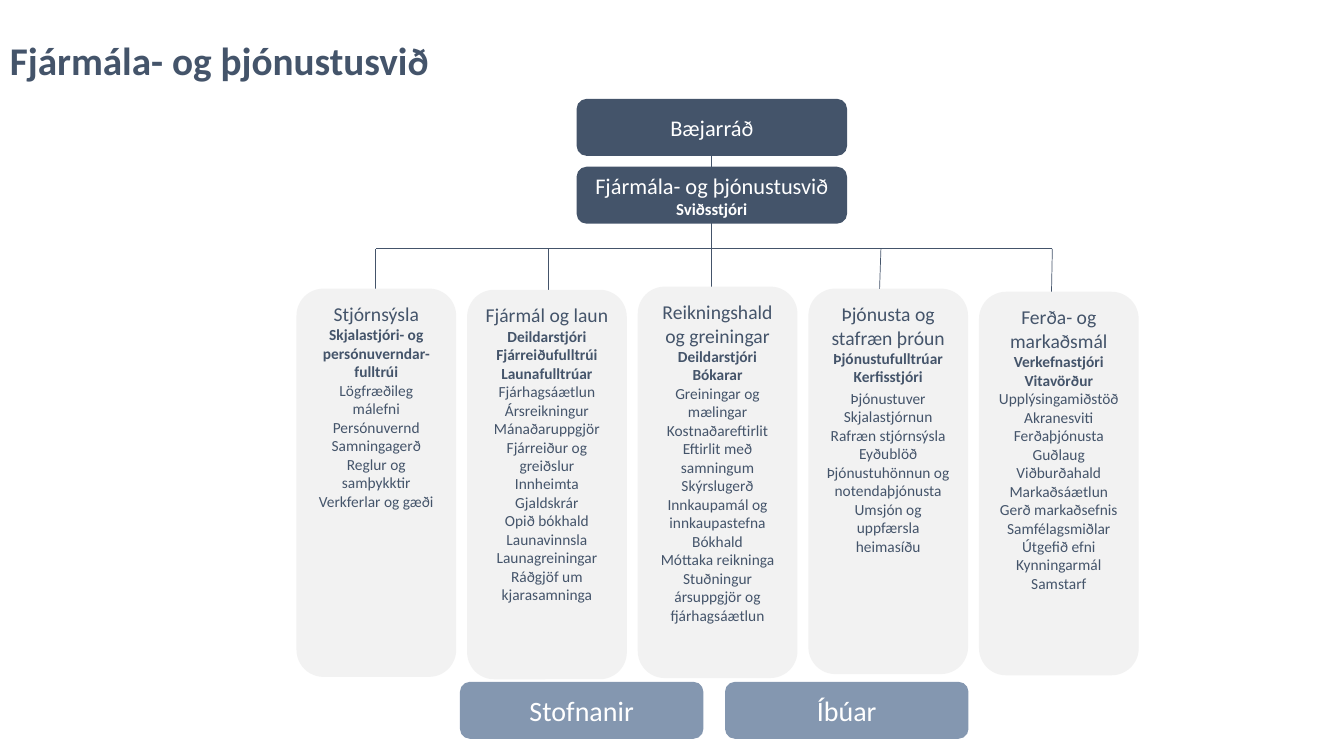
from lxml.etree import SubElement
from pptx import Presentation
from pptx.dml.color import RGBColor
from pptx.enum.shapes import MSO_CONNECTOR, MSO_SHAPE
from pptx.enum.text import MSO_ANCHOR, PP_ALIGN
from pptx.oxml.ns import qn
from pptx.util import Cm, Pt

COLORS = {"navy": "44546A", "steel": "8497B0", "card": "F2F2F2", "white": "FFFFFF"}
FONT = "Calibri"

TITLE = "Fjármála- og þjónustusvið"

# left, top, width, fill, lines of (text, size, bold)
BOXES = [
    (14.55, 2.51, 6.78, "navy", [("Bæjarráð", 16, False)]),
    (14.55, 4.22, 6.78, "navy", [("Fjármála- og þjónustusvið", 16, False),
                                 ("Sviðsstjóri", 12, True)]),
    (11.61, 17.2, 6.1, "steel", [("Stofnanir", 20, False)]),
    (18.29, 17.2, 6.1, "steel", [("Íbúar", 20, False)]),
]
BOX_HEIGHT = 1.4

# top, height, heading, staff, tasks
DEPARTMENTS = [
    (7.29, 9.75, "Stjórnsýsla", ["Skjalastjóri- og persónuverndar-fulltrúi"],
     ["Lögfræðileg málefni", "Persónuvernd", "Samningagerð",
      "Reglur og samþykktir", "Verkferlar og gæði"]),
    (7.32, 9.78, "Fjármál og laun",
     ["Deildarstjóri", "Fjárreiðufulltrúi", "Launafulltrúar"],
     ["Fjárhagsáætlun", "Ársreikningur", "Mánaðaruppgjör",
      "Fjárreiður og greiðslur", "Innheimta", "Gjaldskrár", "Opið bókhald",
      "Launavinnsla", "Launagreiningar", "Ráðgjöf um kjarasamninga"]),
    (7.24, 9.83, "Reikningshald og greiningar", ["Deildarstjóri", "Bókarar"],
     ["Greiningar og mælingar", "Kostnaðareftirlit", "Eftirlit með samningum",
      "Skýrslugerð", "Innkaupamál og innkaupastefna", "Bókhald",
      "Móttaka reikninga", "Stuðningur ársuppgjör og fjárhagsáætlun"]),
    (7.29, 9.68, "Þjónusta og stafræn þróun", ["Þjónustufulltrúar", "Kerfisstjóri"],
     ["Þjónustuver", "Skjalastjórnun", "Rafræn stjórnsýsla", "Eyðublöð",
      "Þjónustuhönnun og notendaþjónusta", "Umsjón og uppfærsla heimasíðu"]),
    (7.37, 9.63, "Ferða- og markaðsmál", ["Verkefnastjóri", "Vitavörður"],
     ["Upplýsingamiðstöð", "Akranesviti", "Ferðaþjónusta", "Guðlaug",
      "Viðburðahald", "Markaðsáætlun", "Gerð markaðsefnis", "Samfélagsmiðlar",
      "Útgefið efni Kynningarmál", "Samstarf"]),
]
CARD_LEFT, CARD_PITCH, CARD_WIDTH = 7.49, 4.3, 3.99
SPACED_STAFF = "Kerfisstjóri"  # followed by a small gap

TRUNK_X, TRUNK_TOP = 17.93, 3.91
BUS_Y, DROP_END = 6.27, 7.8
# x on the bus, x at the card
DROPS = [(9.47, 9.47), (13.82, 13.82), (22.2, 22.15), (26.52, 26.49)]


def color(name):
    return RGBColor.from_string(COLORS[name])


def add_line(page, x1, y1, x2, y2):
    line = page.shapes.add_connector(
        MSO_CONNECTOR.STRAIGHT, Cm(x1), Cm(y1), Cm(x2), Cm(y2))
    line.line.color.rgb = color("navy")
    line.line.width = Pt(0.5)
    SubElement(line._element.spPr, qn("a:effectLst"))


def add_block(page, kind, area, fill, lines, ink, anchor=MSO_ANCHOR.MIDDLE,
              align=PP_ALIGN.CENTER, outlined=True):
    """Draw a filled shape holding one paragraph per (text, size, bold) line."""
    block = page.shapes.add_shape(kind, *[Cm(length) for length in area])
    block.shadow.inherit = False
    block.fill.solid()
    block.fill.fore_color.rgb = color(fill)
    if outlined:
        block.line.color.rgb = color(fill)
        block.line.width = Pt(1)
    else:
        block.line.fill.background()
    frame = block.text_frame
    frame.word_wrap = True
    frame.vertical_anchor = anchor
    for index, (text, size, bold) in enumerate(lines):
        para = frame.add_paragraph() if index else frame.paragraphs[0]
        para.alignment = align
        if text == SPACED_STAFF:
            para.space_after = Pt(2)
        span = para.add_run()
        span.text = text
        span.font.name = FONT
        span.font.size = Pt(size)
        span.font.bold = bold
        span.font.color.rgb = color(ink)


def main():
    deck = Presentation()
    deck.slide_width, deck.slide_height = Cm(33.87), Cm(19.05)
    page = deck.slides.add_slide(deck.slide_layouts[6])

    add_block(page, MSO_SHAPE.RECTANGLE, (0, 0.46, 11.96, 2.08), "white",
              [(TITLE, 28, True)], "navy", align=PP_ALIGN.LEFT, outlined=False)

    add_line(page, TRUNK_X, TRUNK_TOP, TRUNK_X, DROP_END)
    add_line(page, DROPS[0][0], BUS_Y, DROPS[-1][0], BUS_Y)
    for bus_x, card_x in DROPS:
        add_line(page, bus_x, BUS_Y, card_x, DROP_END)

    for left, top, width, fill, lines in BOXES:
        add_block(page, MSO_SHAPE.ROUNDED_RECTANGLE,
                  (left, top, width, BOX_HEIGHT), fill, lines, "white")

    for column, (top, height, heading, staff, tasks) in enumerate(DEPARTMENTS):
        lines = [(heading, 14, False)]
        lines += [(person, 11, True) for person in staff]
        lines += [(task, 11, False) for task in tasks]
        left = CARD_LEFT + column * CARD_PITCH
        add_block(page, MSO_SHAPE.ROUNDED_RECTANGLE,
                  (left, top, CARD_WIDTH, height), "card", lines, "navy",
                  anchor=MSO_ANCHOR.TOP)

    deck.save("out.pptx")


if __name__ == "__main__":
    main()
